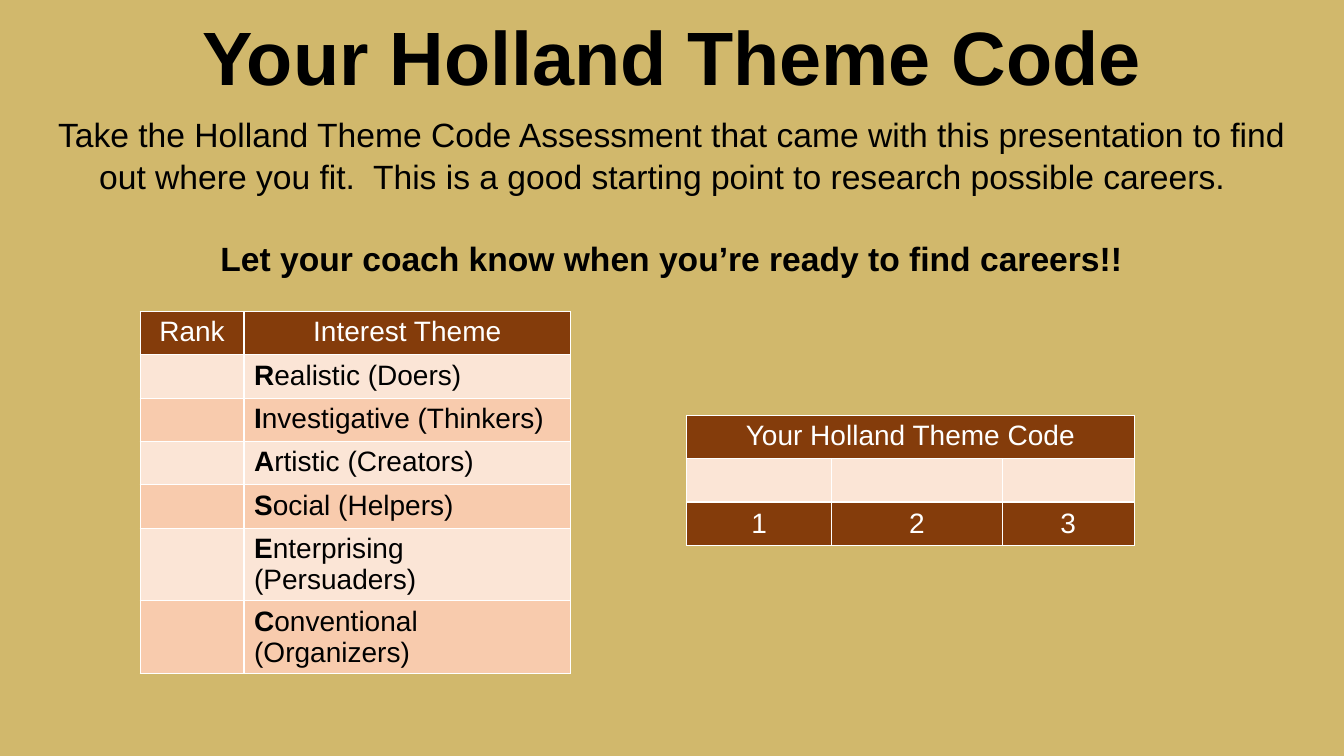
"""Builds the Holland Theme Code slide with its ranking and code tables."""
import pptx
import pptx.dml.color
import pptx.enum.text
import pptx.util

BLACK = pptx.dml.color.RGBColor(0x00, 0x00, 0x00)
WHITE = pptx.dml.color.RGBColor(0xFF, 0xFF, 0xFF)
SAND = pptx.dml.color.RGBColor(0xD1, 0xB8, 0x6C)
BROWN = pptx.dml.color.RGBColor(0x84, 0x3C, 0x0B)
PALE = pptx.dml.color.RGBColor(0xFB, 0xE5, 0xD6)
PEACH = pptx.dml.color.RGBColor(0xF8, 0xCB, 0xAD)

WIDTH, HEIGHT = 13.33, 7.5
ROW_HEIGHT = 0.43
TITLE = "Your Holland Theme Code"
INTRO = ("Take the Holland Theme Code Assessment that came with this presentation to find "
         "out where you fit.  This is a good starting point to research possible careers.  ")
CALL = "Let your coach know when you’re ready to find careers!!"
THEMES = ["Realistic (Doers)", "Investigative (Thinkers)", "Artistic (Creators)",
          "Social (Helpers)", "Enterprising (Persuaders)", "Conventional (Organizers)"]
RANKING = [("Rank", "Interest Theme")] + [("", theme) for theme in THEMES]
CODE = [(TITLE, "", ""), ("", "", ""), ("1", "2", "3")]

CENTER = pptx.enum.text.PP_ALIGN.CENTER
LEFT = pptx.enum.text.PP_ALIGN.LEFT
TOP = pptx.enum.text.MSO_ANCHOR.TOP
MIDDLE = pptx.enum.text.MSO_ANCHOR.MIDDLE
BOTTOM = pptx.enum.text.MSO_ANCHOR.BOTTOM


def style_span(span, size, color, bold=False):
    span.font.name = "Arial"
    span.font.size = pptx.util.Pt(size)
    span.font.color.rgb = color
    span.font.bold = bold


def fill_placeholder(box, area, anchor, lines, size, spacing):
    box.left, box.top, box.width, box.height = map(pptx.util.Inches, area)
    frame = box.text_frame
    frame.text = "\n".join(text for text, bold, gap in lines)
    frame.word_wrap = True
    frame.auto_size = pptx.enum.text.MSO_AUTO_SIZE.NONE
    frame.vertical_anchor = anchor
    for para, (text, bold, gap) in zip(frame.paragraphs, lines):
        para.alignment = CENTER
        para.line_spacing = spacing
        para.space_before = pptx.util.Pt(gap)
        style_span(para.runs[0], size, BLACK, bold)


def add_grid(page, left, top, widths, rows, fills):
    table = page.shapes.add_table(
        len(rows), len(widths), pptx.util.Inches(left), pptx.util.Inches(top),
        pptx.util.Inches(sum(widths)), pptx.util.Inches(ROW_HEIGHT * len(rows))).table
    for column, width in zip(table.columns, widths):
        column.width = pptx.util.Inches(width)
    for r, (texts, fill) in enumerate(zip(rows, fills)):
        for c, text in enumerate(texts):
            cell = table.cell(r, c)
            cell.fill.solid()
            cell.fill.fore_color.rgb = fill
            if not text:
                continue
            para = cell.text_frame.paragraphs[0]
            if fill == BROWN:
                para.text = text
                para.alignment = CENTER
                cell.vertical_anchor = MIDDLE if r else TOP
                style_span(para.runs[0], 20, WHITE)
            else:
                para.alignment = LEFT
                for part, bold in ((text[0], True), (text[1:], False)):
                    span = para.add_run()
                    span.text = part
                    style_span(span, 20, BLACK, bold)
    return table


def main():
    deck = pptx.Presentation()
    deck.slide_width = pptx.util.Inches(WIDTH)
    deck.slide_height = pptx.util.Inches(HEIGHT)
    page = deck.slides.add_slide(deck.slide_layouts[0])
    page.background.fill.solid()
    page.background.fill.fore_color.rgb = SAND

    fill_placeholder(page.shapes.title, (0, 0.17, WIDTH, 0.89), BOTTOM,
                     [(TITLE, True, 0)], 54, 0.9)
    fill_placeholder(page.placeholders[1], (0.23, 1.06, 12.86, 1.72), TOP,
                     [(INTRO, False, 0), (CALL, True, 28)], 24, 1.05)

    add_grid(page, 1.39, 3.09, (1.03, 3.24), RANKING, [BROWN] + [PALE, PEACH] * 3)
    code = add_grid(page, 6.81, 4.12, (1.44, 1.69, 1.31), CODE, [BROWN, PALE, BROWN])
    code.cell(0, 0).merge(code.cell(0, 2))
    deck.save("out.pptx")


if __name__ == "__main__":
    main()
